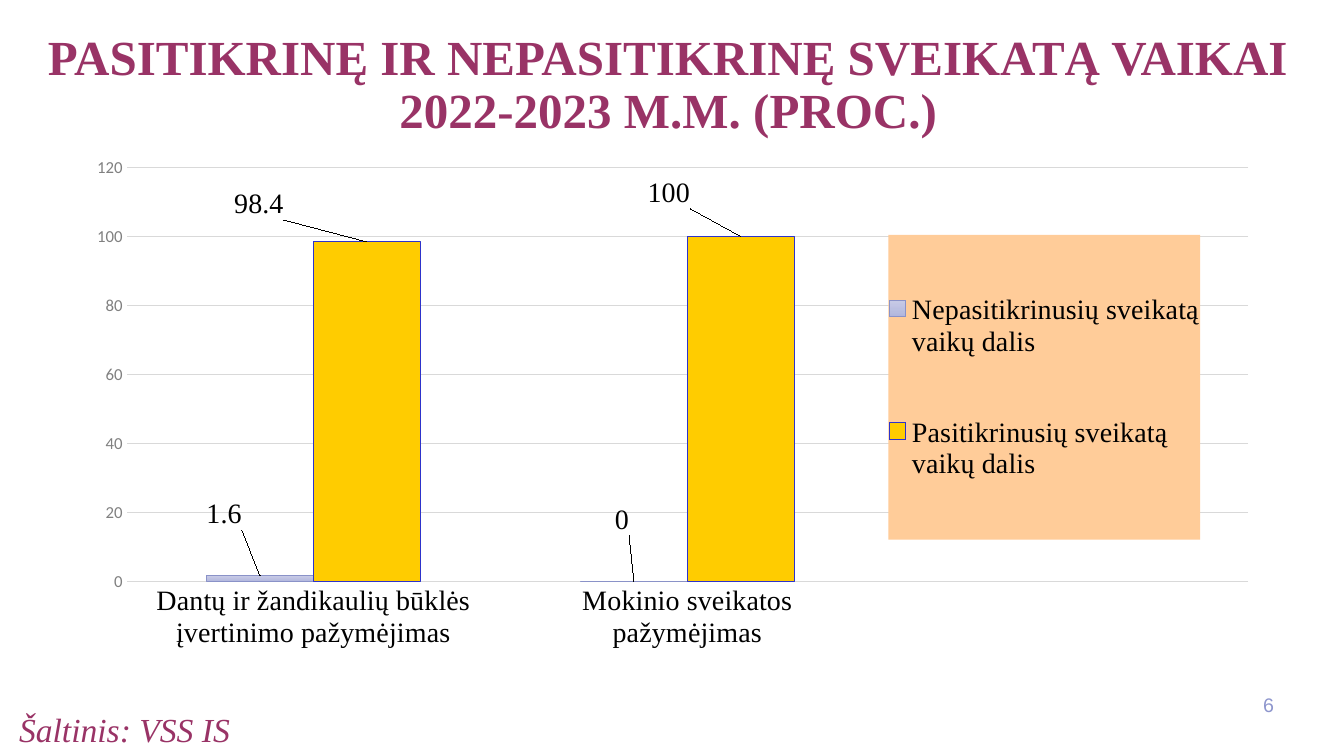
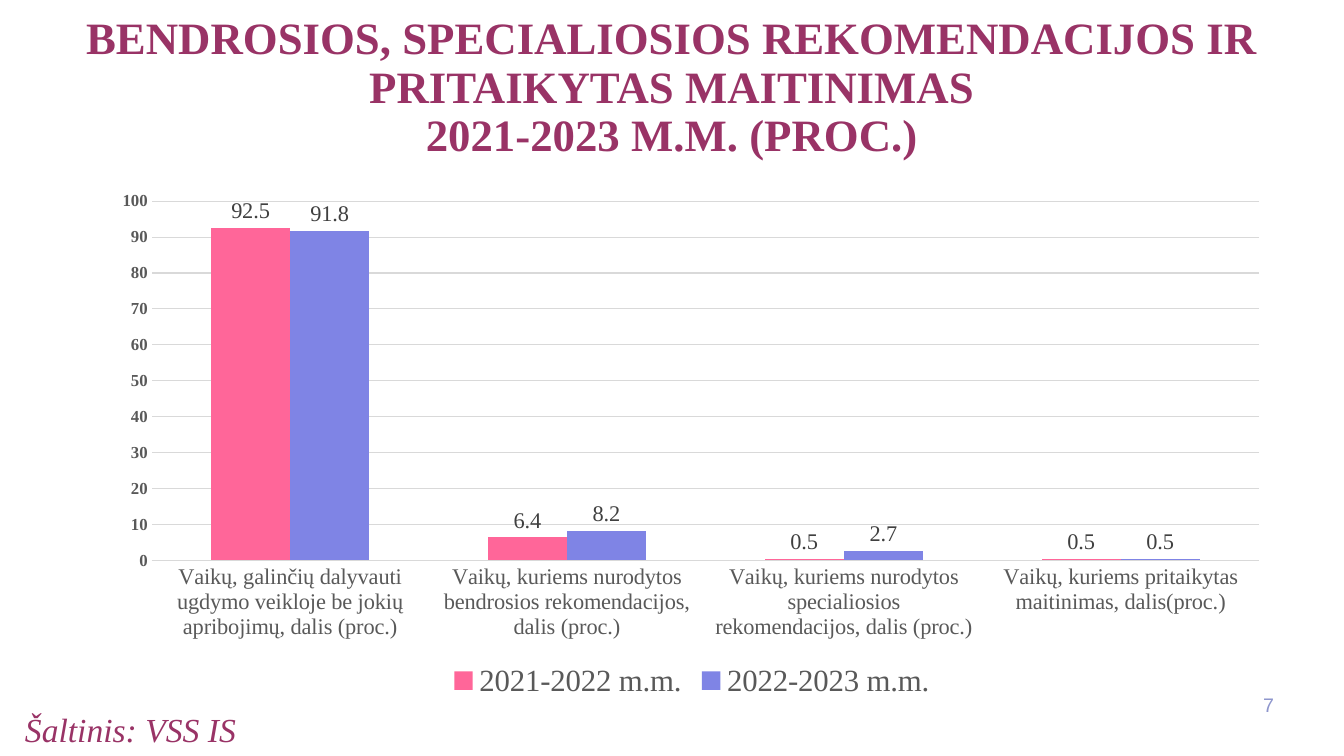
from dataclasses import dataclass
from typing import Any, Optional

import lxml.etree
import pptx
import pptx.chart.data
import pptx.dml.color
import pptx.enum.chart
import pptx.enum.text
import pptx.oxml.ns
import pptx.util

Cm = pptx.util.Cm
qn = pptx.oxml.ns.qn
ALIGN = pptx.enum.text.PP_ALIGN
ANCHOR = pptx.enum.text.MSO_ANCHOR


@dataclass(frozen=True)
class Theme:
    heading: str = "993366"
    page_number: str = "8E96CD"
    grid: str = "D9D9D9"
    black: str = "000000"
    grey: str = "808080"
    dark_grey: str = "595959"
    label_grey: str = "404040"
    legend_fill: str = "FFCC99"
    lavender_light: str = "C8CBE6"
    lavender: str = "B1B6DD"
    lavender_line: str = "8A92C8"
    yellow: str = "FFCC00"
    blue_line: str = "2D33CB"
    pink: str = "FF6699"
    violet: str = "7F84E5"
    serif: str = "Times New Roman"
    sans: str = "Arial"
    axis_sans: str = "Calibri"
    source_size: float = 24
    number_size: float = 14
    axis_size: float = 12


THEME = Theme()


@dataclass(frozen=True)
class Box:
    left: float
    top: float
    width: float
    height: float

    def lengths(self) -> tuple:
        return Cm(self.left), Cm(self.top), Cm(self.width), Cm(self.height)


@dataclass(frozen=True)
class TextStyle:
    size: float
    color: str
    name: str = THEME.serif
    bold: bool = False
    italic: bool = False


@dataclass(frozen=True)
class Series:
    name: str
    values: tuple
    color: str
    gradient_end: Optional[str] = None
    line: Optional[str] = None
    label_offsets: tuple = ()


@dataclass(frozen=True)
class ChartSpec:
    box: Box
    categories: tuple
    series: tuple
    plot_area: Box
    maximum: float
    step: float
    category_style: TextStyle
    value_style: TextStyle
    label_style: TextStyle
    legend_style: TextStyle
    category_line: Optional[str] = None
    legend_area: Optional[Box] = None


@dataclass(frozen=True)
class SlideSpec:
    title: str
    title_box: Box
    title_size: float
    source_left: float
    number: int
    chart: ChartSpec


SLIDES = (
    SlideSpec(
        title="PASITIKRINĘ IR NEPASITIKRINĘ SVEIKATĄ VAIKAI 2022-2023 M.M. (PROC.)",
        title_box=Box(-0.3, 0.71, 34.29, 3.51),
        title_size=35,
        source_left=0.23,
        number=6,
        chart=ChartSpec(
            box=Box(1.83, 3.66, 30.23, 15.06),
            categories=(
                "Dantų ir žandikaulių būklės įvertinimo pažymėjimas",
                "Mokinio sveikatos pažymėjimas",
                "",
            ),
            series=(
                Series("Nepasitikrinusių sveikatą vaikų dalis", (1.6, 0, None),
                       THEME.lavender_light, THEME.lavender, THEME.lavender_line,
                       ((-0.03, -0.07), (-0.01, -0.07))),
                Series("Pasitikrinusių sveikatą vaikų dalis", (98.4, 100, None),
                       THEME.yellow, line=THEME.blue_line,
                       label_offsets=((-0.09, -0.03), (-0.06, -0.04))),
            ),
            plot_area=Box(0.045, 0.037, 0.935, 0.693),
            maximum=120,
            step=20,
            category_style=TextStyle(20, THEME.black),
            value_style=TextStyle(THEME.axis_size, THEME.grey, THEME.axis_sans),
            label_style=TextStyle(20, THEME.black),
            legend_style=TextStyle(20, THEME.black),
            legend_area=Box(0.68, 0.15, 0.26, 0.51),
        ),
    ),
    SlideSpec(
        title="BENDROSIOS, SPECIALIOSIOS REKOMENDACIJOS IR PRITAIKYTAS MAITINIMAS\n"
              "2021-2023 M.M. (PROC.)",
        title_box=Box(-0.28, 0.28, 34.42, 3.51),
        title_size=32,
        source_left=0.38,
        number=7,
        chart=ChartSpec(
            box=Box(2.51, 4.57, 29.85, 13.16),
            categories=(
                "Vaikų, galinčių dalyvauti ugdymo veikloje be jokių apribojimų, dalis (proc.)",
                "Vaikų, kuriems nurodytos bendrosios rekomendacijos, dalis (proc.)",
                "Vaikų, kuriems nurodytos specialiosios rekomendacijos, dalis (proc.)",
                "Vaikų, kuriems pritaikytas maitinimas, dalis(proc.)",
            ),
            series=(
                Series("2021-2022 m.m.", (92.5, 6.4, 0.5, 0.5), THEME.pink),
                Series("2022-2023 m.m.", (91.8, 8.2, 2.7, 0.5), THEME.violet),
            ),
            plot_area=Box(0.044, 0.038, 0.935, 0.688),
            maximum=100,
            step=10,
            category_style=TextStyle(16, THEME.dark_grey),
            value_style=TextStyle(THEME.axis_size, THEME.dark_grey, bold=True),
            label_style=TextStyle(16, THEME.label_grey),
            legend_style=TextStyle(22, THEME.dark_grey),
            category_line=THEME.grid,
        ),
    ),
)


def rgb(color: str) -> pptx.dml.color.RGBColor:
    return pptx.dml.color.RGBColor.from_string(color)


def format_font(font: Any, style: TextStyle) -> None:
    font.name = style.name
    font.size = pptx.util.Pt(style.size)
    font.bold = style.bold
    font.italic = style.italic
    font.color.rgb = rgb(style.color)


def format_line(line: Any, color: Optional[str]) -> None:
    if color is None:
        line.fill.background()
    else:
        line.color.rgb = rgb(color)
        line.width = pptx.util.Pt(0.75)


def write_text(shape: Any, text: str, *, style: TextStyle, align: Any = ALIGN.LEFT,
               anchor: Any = ANCHOR.TOP, line_spacing: Optional[float] = None) -> None:
    frame = shape.text_frame
    frame.word_wrap = True
    frame.auto_size = pptx.enum.text.MSO_AUTO_SIZE.NONE
    frame.vertical_anchor = anchor
    paragraph = frame.paragraphs[0]
    paragraph.text = text
    paragraph.alignment = align
    paragraph.line_spacing = line_spacing
    for run in paragraph.runs:
        format_font(run.font, style)


def set_layout(parent: Any, index: int, values: dict) -> None:
    for existing in parent.findall(qn("c:layout")):
        parent.remove(existing)
    layout = lxml.etree.Element(qn("c:layout"))
    manual = lxml.etree.SubElement(layout, qn("c:manualLayout"))
    for name, value in values.items():
        lxml.etree.SubElement(manual, qn(f"c:{name}")).set("val", str(value))
    parent.insert(index, layout)


def edge_layout(area: Box) -> dict:
    return {"xMode": "edge", "yMode": "edge", "x": area.left, "y": area.top,
            "w": area.width, "h": area.height}


def format_series(series: Any, spec: Series, label_style: TextStyle) -> None:
    series.invert_if_negative = False
    fill = series.format.fill
    if spec.gradient_end:
        fill.gradient()
        fill.gradient_angle = 270
        for stop, color in zip(fill.gradient_stops, (spec.color, spec.gradient_end)):
            stop.color.rgb = rgb(color)
            stop.position = float(color == spec.gradient_end)
    else:
        fill.solid()
        fill.fore_color.rgb = rgb(spec.color)
    format_line(series.format.line, spec.line)
    outside = pptx.enum.chart.XL_LABEL_POSITION.OUTSIDE_END
    labels = series.data_labels
    labels.show_value = True
    labels.position = outside
    format_font(labels.font, label_style)
    for index, (x, y) in enumerate(spec.label_offsets):
        label = series.points[index].data_label
        format_font(label.font, label_style)
        label.position = outside
        element = series.data_labels._element.findall(qn("c:dLbl"))[index]
        set_layout(element, 1, {"x": x, "y": y})


def format_legend(chart: Any, spec: ChartSpec) -> None:
    chart.has_legend = True
    legend = chart.legend
    legend.position = pptx.enum.chart.XL_LEGEND_POSITION.BOTTOM
    legend.include_in_layout = False
    format_font(legend.font, spec.legend_style)
    if spec.legend_area:
        element = chart.element.find(".//" + qn("c:legend"))
        set_layout(element, 1, edge_layout(spec.legend_area))
        properties = lxml.etree.Element(qn("c:spPr"))
        fill = lxml.etree.SubElement(properties, qn("a:solidFill"))
        lxml.etree.SubElement(fill, qn("a:srgbClr")).set("val", THEME.legend_fill)
        element.find(qn("c:txPr")).addprevious(properties)


def add_column_chart(slide: Any, spec: ChartSpec) -> None:
    data = pptx.chart.data.CategoryChartData()
    data.categories = spec.categories
    for series in spec.series:
        data.add_series(series.name, series.values)
    chart = slide.shapes.add_chart(
        pptx.enum.chart.XL_CHART_TYPE.COLUMN_CLUSTERED, *spec.box.lengths(), data).chart
    chart.has_title = False
    format_font(chart.font, TextStyle(10, THEME.black, THEME.axis_sans))
    plot = chart.plots[0]
    plot.vary_by_categories = False
    plot.gap_width = 150
    plot.overlap = 0
    for series, series_spec in zip(plot.series, spec.series):
        format_series(series, series_spec, spec.label_style)
    for axis, style, line in ((chart.category_axis, spec.category_style, spec.category_line),
                              (chart.value_axis, spec.value_style, None)):
        axis.major_tick_mark = pptx.enum.chart.XL_TICK_MARK.NONE
        axis.minor_tick_mark = pptx.enum.chart.XL_TICK_MARK.NONE
        format_font(axis.tick_labels.font, style)
        format_line(axis.format.line, line)
    chart.value_axis.minimum_scale = 0
    chart.value_axis.maximum_scale = spec.maximum
    chart.value_axis.major_unit = spec.step
    format_line(chart.value_axis.major_gridlines.format.line, THEME.grid)
    set_layout(chart.element.find(".//" + qn("c:plotArea")), 0,
               {"layoutTarget": "inner", **edge_layout(spec.plot_area)})
    format_legend(chart, spec)


def add_slide(presentation: Any, spec: SlideSpec) -> None:
    slide = presentation.slides.add_slide(presentation.slide_layouts[5])
    title = slide.shapes.title
    title.left, title.top, title.width, title.height = spec.title_box.lengths()
    write_text(title, spec.title, style=TextStyle(spec.title_size, THEME.heading, bold=True),
               align=ALIGN.CENTER, line_spacing=0.9)
    source = slide.shapes.add_textbox(*Box(spec.source_left, 17.73, 16, 0.97).lengths())
    write_text(source, "Šaltinis: VSS IS",
               style=TextStyle(THEME.source_size, THEME.heading, italic=True))
    number = slide.shapes.add_textbox(*Box(31.04, 17.25, 1.32, 1.02).lengths())
    write_text(number, str(spec.number), align=ALIGN.RIGHT, anchor=ANCHOR.MIDDLE,
               style=TextStyle(THEME.number_size, THEME.page_number, THEME.sans))
    add_column_chart(slide, spec.chart)


def main() -> None:
    presentation = pptx.Presentation()
    presentation.slide_width, presentation.slide_height = Cm(33.87), Cm(19.05)
    for spec in SLIDES:
        add_slide(presentation, spec)
    presentation.save("out.pptx")


if __name__ == "__main__":
    main()
